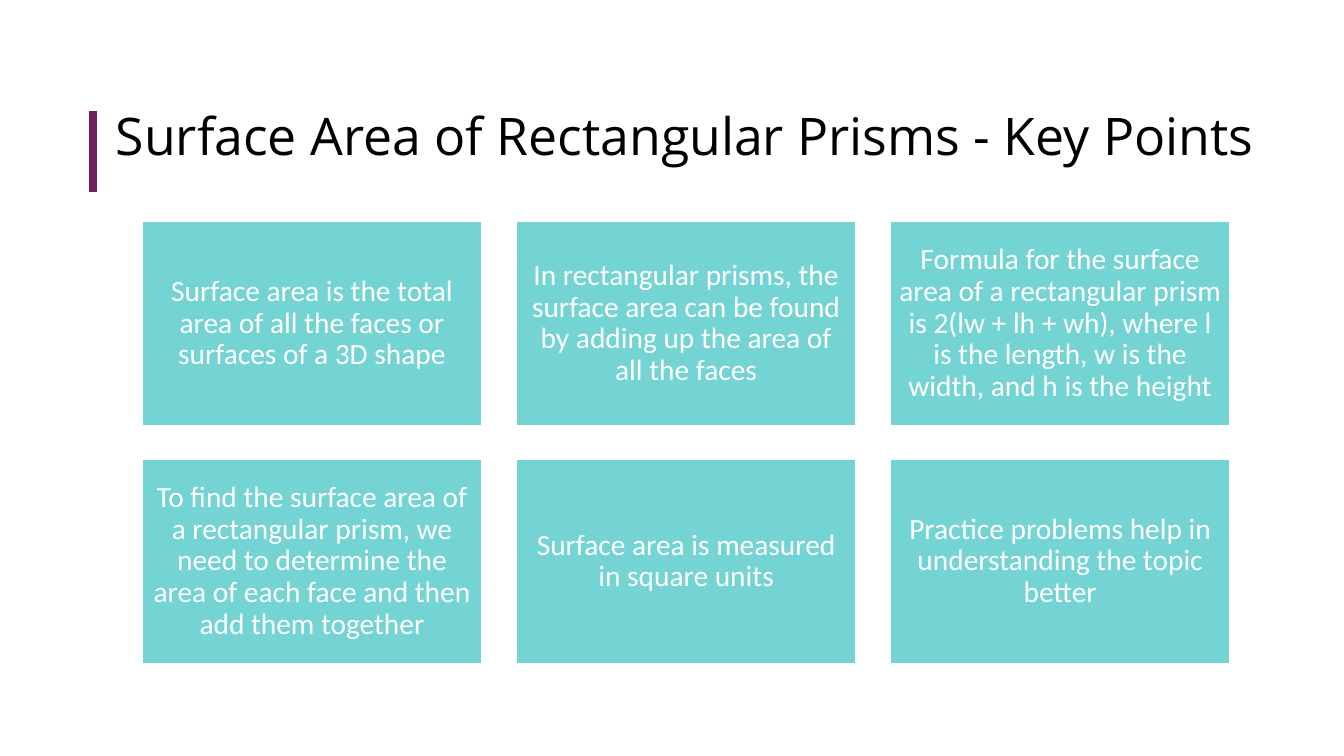
from lxml import etree
from pptx import Presentation
from pptx.dml.color import RGBColor
from pptx.enum.shapes import MSO_CONNECTOR as Connector, MSO_SHAPE as Shape
from pptx.enum.text import MSO_ANCHOR as Anchor, PP_ALIGN as Align
from pptx.oxml.ns import qn
from pptx.util import Inches, Pt

PURPLE = RGBColor(0x72, 0x22, 0x62)
TEAL = RGBColor(0x74, 0xD4, 0xD3)
WHITE = RGBColor(0xFF, 0xFF, 0xFF)
BLACK = RGBColor(0, 0, 0)

TITLE = "Surface Area of Rectangular Prisms - Key Points"
KEY_POINTS = [
    "Surface area is the total area of all the faces or surfaces of a 3D shape",
    "In rectangular prisms, the surface area can be found by adding up the area of all the faces",
    "Formula for the surface area of a rectangular prism is 2(lw + lh + wh), "
    "where l is the length, w is the width, and h is the height",
    "To find the surface area of a rectangular prism, we need to determine "
    "the area of each face and then add them together",
    "Surface area is measured in square units",
    "Practice problems help in understanding the topic better",
]
COLUMNS = 3
GAP = 0.34
INSET = 0.09


def write_text(frame, text, font_name, size, color):
    frame.word_wrap = True
    para = frame.paragraphs[0]
    para.text = text
    para.line_spacing = 0.9
    para.font.name = font_name
    para.font.size = Pt(size)
    para.font.color.rgb = color
    return para


def add_title(page, left, top, width, height):
    """Place the heading with an accent bar at the left edge of its box."""
    bar = page.shapes.add_connector(
        Connector.STRAIGHT, Inches(left), Inches(top), Inches(left), Inches(top + height))
    bar.line.color.rgb = PURPLE
    bar.line.width = Pt(6)
    etree.SubElement(bar._element.spPr, qn("a:effectLst"))

    indent = 0.13
    box = page.shapes.add_textbox(
        Inches(left + indent), Inches(top), Inches(width - indent), Inches(height))
    frame = box.text_frame
    frame.margin_top = frame.margin_right = 0
    write_text(frame, TITLE, "Open Sans", 37, BLACK)


def add_card(page, text, left, top, width, height):
    card = page.shapes.add_shape(
        Shape.RECTANGLE, Inches(left), Inches(top), Inches(width), Inches(height))
    card.shadow.inherit = False
    card.fill.solid()
    card.fill.fore_color.rgb = TEAL
    card.line.color.rgb = WHITE
    card.line.width = Pt(1)
    frame = card.text_frame
    frame.margin_left = frame.margin_right = Inches(INSET)
    frame.margin_top = frame.margin_bottom = Inches(INSET)
    frame.vertical_anchor = Anchor.MIDDLE
    write_text(frame, text, "Calibri", 21, WHITE).alignment = Align.CENTER


def add_card_grid(page, left, top, width, height):
    rows = len(KEY_POINTS) // COLUMNS
    card_width = (width - GAP * (COLUMNS - 1)) / COLUMNS
    card_height = (height - GAP * (rows - 1)) / rows
    for index, text in enumerate(KEY_POINTS):
        row, column = divmod(index, COLUMNS)
        add_card(page, text, left + column * (card_width + GAP),
                 top + row * (card_height + GAP), card_width, card_height)


def main():
    deck = Presentation()
    deck.slide_width = Inches(13.33)
    deck.slide_height = Inches(7.5)
    page = deck.slides.add_slide(deck.slide_layouts[6])
    add_title(page, 0.92, 1.1, 11.63, 0.8)
    add_card_grid(page, 1.41, 2.2, 10.79, 4.38)
    deck.save("out.pptx")


if __name__ == "__main__":
    main()
